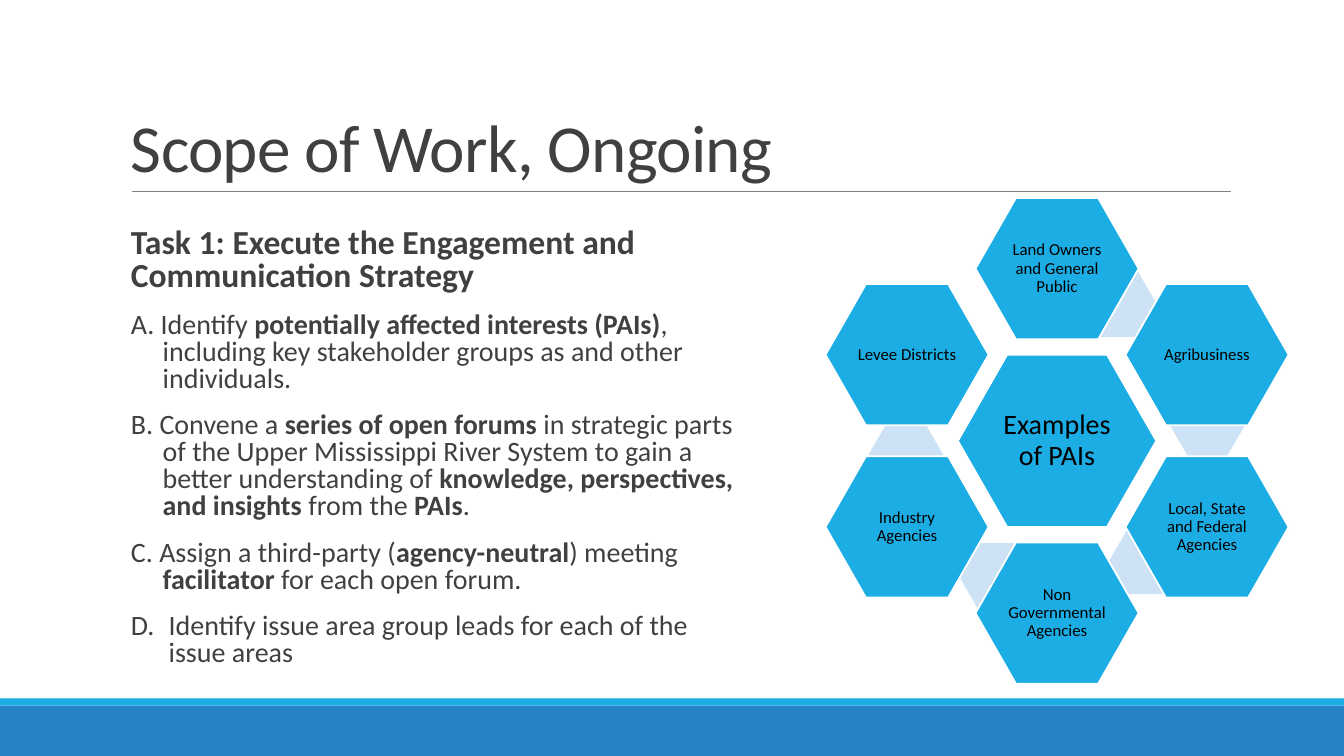
"""Build the Scope of Work slide with its task list and ring of affected interests."""
import dataclasses
import typing

import lxml.etree
import pptx
import pptx.dml.color
import pptx.enum.shapes
import pptx.enum.text
import pptx.oxml.ns
import pptx.shapes.autoshape
import pptx.slide
import pptx.text.text
import pptx.util

Cm = pptx.util.Cm
Pt = pptx.util.Pt
SHAPES = pptx.enum.shapes.MSO_SHAPE
ANCHOR = pptx.enum.text.MSO_ANCHOR
ALIGN = pptx.enum.text.PP_ALIGN


@dataclasses.dataclass(frozen=True)
class Theme:
    """Hold the colours, font and type sizes."""
    font: str = "Calibri"
    cyan: str = "1CADE4"
    blue: str = "2683C6"
    pale: str = "CDE3F5"
    white: str = "FFFFFF"
    rule: str = "808080"
    ink: str = "404040"
    black: str = "000000"
    title: float = 48
    heading: float = 24
    body: float = 20
    label: float = 12


@dataclasses.dataclass(frozen=True)
class Block:
    """Describe a filled shape in centimetres."""
    left: float
    top: float
    width: float
    height: float
    fill: str
    kind: SHAPES = SHAPES.RECTANGLE
    adjust: float = 0
    outline: str = ""


@dataclasses.dataclass(frozen=True)
class Interest:
    """Place a ring hexagon by column and row steps from the hub."""
    text: str
    column: int
    row: int


@dataclasses.dataclass(frozen=True)
class Item:
    """Describe a paragraph as alternating plain and bold spans."""
    spans: tuple[str, ...]
    size: float
    hang: float = 0


THEME = Theme()
HUB_X, HUB_Y = 26.64, 11.11
COLUMN_STEP, ROW_STEP = 3.78, 2.17
INSET = 0.25

BARS = (
    Block(0, 17.78, 33.87, 1.27, THEME.blue),
    Block(0, 17.6, 33.87, 0.18, THEME.cyan),
)
LINKS = ((27.28, 6.86), (29.49, 9.91), (27.94, 13.34), (24.16, 13.69), (21.89, 10.64))
INTERESTS = (
    Interest("Land Owners and General Public", 0, -2),
    Interest("Agribusiness", 1, -1),
    Interest("Local, State and Federal Agencies", 1, 1),
    Interest("Non Governmental Agencies", 0, 2),
    Interest("Industry Agencies", -1, 1),
    Interest("Levee Districts", -1, -1),
)
TASKS = (
    Item(("", "Task 1: Execute the Engagement and Communication Strategy"), THEME.heading),
    Item(("A. Identify ", "potentially affected interests (PAIs)",
          ", including key stakeholder groups as and other individuals."), THEME.body, 0.8),
    Item(("B. Convene a ", "series of open forums",
          " in strategic parts of the Upper Mississippi River System to gain a better "
          "understanding of ", "knowledge, perspectives, and insights ", "from the ",
          "PAIs", "."), THEME.body, 0.8),
    Item(("C. Assign a third-party (", "agency-neutral", ") meeting ", "facilitator",
          " for each open forum."), THEME.body, 0.8),
    Item(("D.\tIdentify issue area group leads for each of the issue areas",), THEME.body, 0.95),
)


def apply(target: typing.Any, values: dict[str, typing.Any]) -> None:
    """Set each named attribute on the target."""
    for name, value in values.items():
        setattr(target, name, value)


def colour(code: str) -> pptx.dml.color.RGBColor:
    """Turn a hex code into a colour."""
    return pptx.dml.color.RGBColor.from_string(code)


def add_span(para: pptx.text.text._Paragraph, text: str, size: float, ink: str,
             bold: bool = False) -> pptx.text.text._Run:
    """Add one formatted run."""
    span = para.add_run()
    span.text = text
    apply(span.font, {"name": THEME.font, "size": Pt(size), "bold": bold})
    span.font.color.rgb = colour(ink)
    return span


def set_frame(frame: pptx.text.text.TextFrame, inset_x: float, inset_y: float,
              anchor: ANCHOR) -> None:
    """Set wrapping, margins and anchor."""
    apply(frame, {
        "word_wrap": True, "vertical_anchor": anchor,
        "margin_left": Cm(inset_x), "margin_right": Cm(inset_x),
        "margin_top": Cm(inset_y), "margin_bottom": Cm(inset_y),
    })


def add_block(page: pptx.slide.Slide, block: Block) -> pptx.shapes.autoshape.Shape:
    """Draw a filled shape."""
    shape = page.shapes.add_shape(block.kind, Cm(block.left), Cm(block.top),
                                  Cm(block.width), Cm(block.height))
    shape.shadow.inherit = False
    shape.fill.solid()
    shape.fill.fore_color.rgb = colour(block.fill)
    if block.adjust:
        shape.adjustments[0] = block.adjust
    if block.outline:
        shape.line.color.rgb = colour(block.outline)
        shape.line.width = Pt(1.25)
    else:
        shape.line.fill.background()
    return shape


def add_hexagon(page: pptx.slide.Slide, text: str, x: float, y: float, width: float,
                height: float, size: float) -> None:
    """Draw a labelled hexagon around a centre."""
    shape = add_block(page, Block(x - width / 2, y - height / 2, width, height, THEME.cyan,
                                  SHAPES.HEXAGON, 0.286, THEME.white))
    set_frame(shape.text_frame, 0.05, 0.05, ANCHOR.MIDDLE)
    para = shape.text_frame.paragraphs[0]
    apply(para, {"alignment": ALIGN.CENTER, "line_spacing": 0.9})
    add_span(para, text, size, THEME.black)


def add_title(page: pptx.slide.Slide) -> None:
    """Write the title and draw the rule under it."""
    box = page.shapes.add_textbox(Cm(3.05), Cm(0.79), Cm(27.94), Cm(4.04))
    set_frame(box.text_frame, INSET, 0.13, ANCHOR.BOTTOM)
    para = box.text_frame.paragraphs[0]
    para.line_spacing = 0.85
    span = add_span(para, "Scope of Work, Ongoing", THEME.title, THEME.ink)
    span.font._element.set("spc", "-50")
    rule = page.shapes.add_connector(pptx.enum.shapes.MSO_CONNECTOR.STRAIGHT,
                                     Cm(3.33), Cm(4.83), Cm(31.01), Cm(4.83))
    rule.line.color.rgb = colour(THEME.rule)
    rule.line.width = Pt(0.5)
    lxml.etree.SubElement(rule._element.spPr, pptx.oxml.ns.qn("a:effectLst"))


def add_tasks(page: pptx.slide.Slide) -> None:
    """Write the task list with hanging indents."""
    box = page.shapes.add_textbox(Cm(3.05), Cm(5.64), Cm(15.62), Cm(12.22))
    set_frame(box.text_frame, 0, 0.13, ANCHOR.TOP)
    for index, item in enumerate(TASKS):
        para = box.text_frame.add_paragraph() if index else box.text_frame.paragraphs[0]
        apply(para, {"line_spacing": 0.8, "space_before": Pt(12 if index else 0),
                     "space_after": Pt(2)})
        indent = para._p.get_or_add_pPr()
        indent.set("marL", str(Cm(INSET + item.hang)))
        indent.set("indent", str(-Cm(item.hang)))
        for order, text in enumerate(item.spans):
            if text:
                add_span(para, text, item.size, THEME.ink, order % 2 == 1)


def main() -> None:
    """Assemble and save the deck."""
    deck = pptx.Presentation()
    apply(deck, {"slide_width": Cm(33.87), "slide_height": Cm(19.05)})
    page = deck.slides.add_slide(deck.slide_layouts[6])
    for bar in BARS:
        add_block(page, bar)
    add_title(page)
    for left, top in LINKS:
        add_block(page, Block(left, top, 1.88, 1.63, THEME.pale, SHAPES.HEXAGON, 0.289))
    add_hexagon(page, "Examples of PAIs", HUB_X, HUB_Y, 5, 4.34, THEME.body)
    for interest in INTERESTS:
        add_hexagon(page, interest.text, HUB_X + interest.column * COLUMN_STEP,
                    HUB_Y + interest.row * ROW_STEP, 4.11, 3.56, THEME.label)
    add_tasks(page)
    deck.save("out.pptx")


if __name__ == "__main__":
    main()
